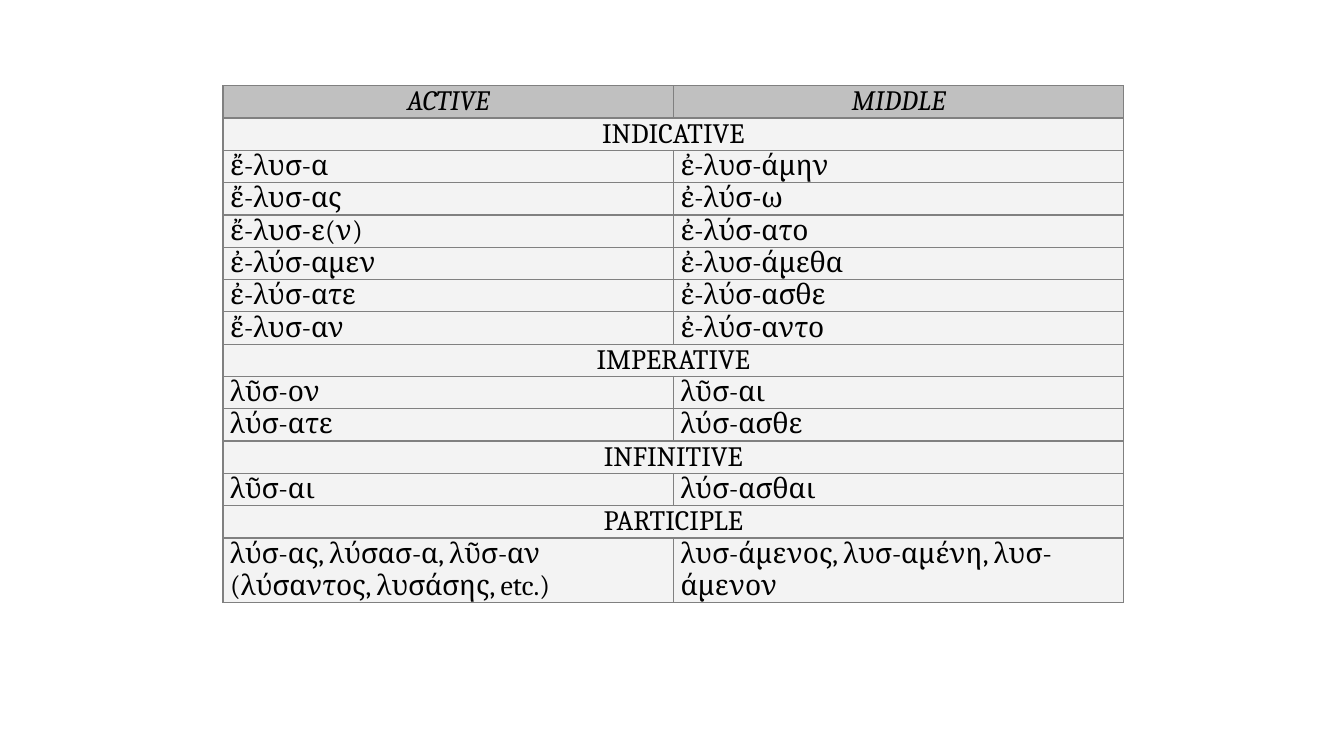
from lxml.etree import SubElement
from pptx import Presentation
from pptx.dml.color import RGBColor
from pptx.enum.text import PP_ALIGN
from pptx.oxml.ns import qn
from pptx.util import Cm, Pt

BLACK = RGBColor(0x00, 0x00, 0x00)
HEADER_GREY = RGBColor(0xC0, 0xC0, 0xC0)
BODY_GREY = RGBColor(0xF3, 0xF3, 0xF3)
BORDER_GREY = RGBColor(0x80, 0x80, 0x80)

# Aorist forms of λύω; a row with one entry is a mood heading
PARADIGM = [
    ("ACTIVE", "MIDDLE"),
    ("INDICATIVE",),
    ("ἔ-λυσ-α", "ἐ-λυσ-άμην"),
    ("ἔ-λυσ-ας", "ἐ-λύσ-ω"),
    ("ἔ-λυσ-ε(ν)", "ἐ-λύσ-ατο"),
    ("ἐ-λύσ-αμεν", "ἐ-λυσ-άμεθα"),
    ("ἐ-λύσ-ατε", "ἐ-λύσ-ασθε"),
    ("ἔ-λυσ-αν", "ἐ-λύσ-αντο"),
    ("IMPERATIVE",),
    ("λῦσ-ον", "λῦσ-αι"),
    ("λύσ-ατε", "λύσ-ασθε"),
    ("INFINITIVE",),
    ("λῦσ-αι", "λύσ-ασθαι"),
    ("PARTICIPLE",),
    ("λύσ-ας, λύσασ-α, λῦσ-αν\v(λύσαντος, λυσάσης, etc.)",
     "λυσ-άμενος, λυσ-αμένη, λυσ-άμενον"),
]
VOICE_WIDTH = Cm(11.35)
LINE_HEIGHT = Cm(0.81)


def add_borders(cell):
    properties = cell._tc.get_or_add_tcPr()
    for position, side in enumerate(("a:lnL", "a:lnR", "a:lnT", "a:lnB")):
        line = SubElement(properties, qn(side), w=str(Pt(1)))
        properties.insert(position, line)  # borders come before the fill
        fill = SubElement(line, qn("a:solidFill"))
        SubElement(fill, qn("a:srgbClr"), val=str(BORDER_GREY))


prs = Presentation()
prs.slide_width, prs.slide_height = Cm(33.87), Cm(19.05)
slide = prs.slides.add_slide(prs.slide_layouts[6])

# Table frame
paradigm = slide.shapes.add_table(
    len(PARADIGM), 2, Cm(5.62), Cm(2.16),
    2 * VOICE_WIDTH, (len(PARADIGM) + 1) * LINE_HEIGHT).table
paradigm.first_row = paradigm.horz_banding = False
for column in paradigm.columns:
    column.width = VOICE_WIDTH
for row in paradigm.rows:
    row.height = LINE_HEIGHT
paradigm.rows[len(PARADIGM) - 1].height = 2 * LINE_HEIGHT

# Cells
for row_no, forms in enumerate(PARADIGM):
    is_header = row_no == 0
    is_mood = len(forms) == 1
    if is_mood:
        paradigm.cell(row_no, 0).merge(paradigm.cell(row_no, 1))
    for col_no in range(2):
        cell = paradigm.cell(row_no, col_no)
        cell.margin_left = cell.margin_right = Cm(0.18)
        cell.margin_top = cell.margin_bottom = 0
        cell.fill.solid()
        cell.fill.fore_color.rgb = HEADER_GREY if is_header else BODY_GREY
        add_borders(cell)
        if col_no < len(forms):
            cell.text = forms[col_no]
        for paragraph in cell.text_frame.paragraphs:
            paragraph.alignment = PP_ALIGN.CENTER if is_header or is_mood else PP_ALIGN.LEFT
            font = paragraph.font
            font.name, font.size = "Cambria", Pt(20)
            font.bold, font.italic = False, is_header
            font.color.rgb = BLACK

prs.save("out.pptx")
